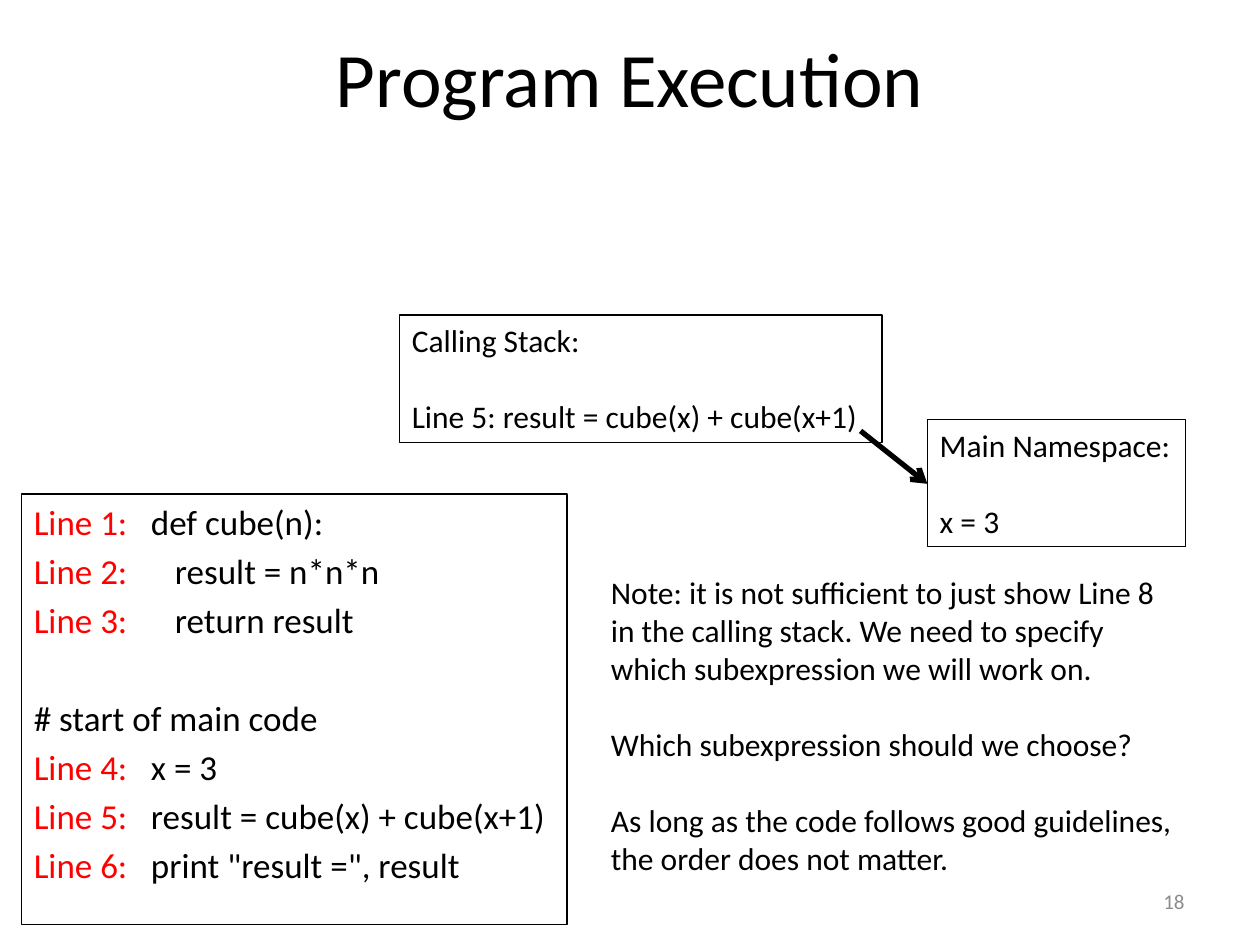
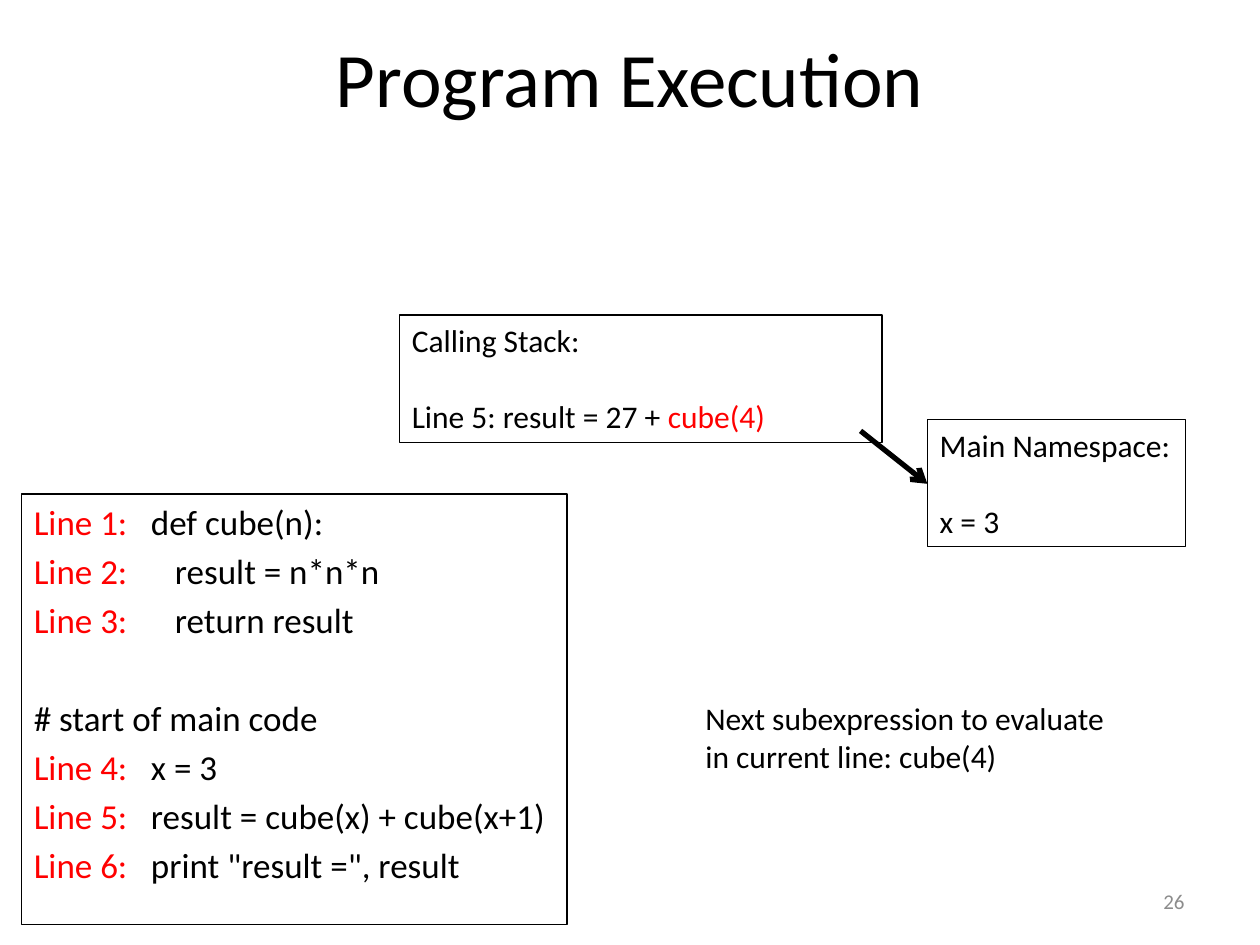
from dataclasses import dataclass

from lxml import etree
from pptx import Presentation
from pptx.dml.color import RGBColor
from pptx.enum.shapes import MSO_CONNECTOR
from pptx.enum.text import MSO_ANCHOR, MSO_AUTO_SIZE, PP_ALIGN
from pptx.oxml.ns import qn
from pptx.slide import Slide
from pptx.text.text import TextFrame, _Paragraph
from pptx.util import Inches, Pt

STRAIGHT = MSO_CONNECTOR.STRAIGHT
TOP, MIDDLE = MSO_ANCHOR.TOP, MSO_ANCHOR.MIDDLE
LEFT, CENTER, RIGHT = PP_ALIGN.LEFT, PP_ALIGN.CENTER, PP_ALIGN.RIGHT
FIT_TEXT = MSO_AUTO_SIZE.SHAPE_TO_FIT_TEXT

BLACK = RGBColor(0x00, 0x00, 0x00)
RED = RGBColor(0xFF, 0x00, 0x00)
GRAY = RGBColor(0x8C, 0x8C, 0x8C)

FONT = "Calibri"
TITLE_SIZE, CODE_SIZE, BODY_SIZE, NUMBER_SIZE = Pt(44), Pt(20), Pt(18), Pt(12)
BODY_GAP = Pt(22)          # one line of body text
CODE_SPACING = Pt(4)
CODE_SECTION_GAP = Pt(32)
CODE_TAB, CODE_INDENT = Inches(0.93), Inches(0.19)


@dataclass(frozen=True)
class Area:
    left: float
    top: float
    width: float
    height: float


@dataclass(frozen=True)
class CodeLine:
    label: str
    statement: str
    level: int = 0


@dataclass(frozen=True)
class Step:
    number: int
    stack_line: str
    pending_call: str
    note: tuple[str, ...]
    note_area: Area


TITLE_AREA = Area(0.5, 0.17, 9, 0.88)
CODE_AREA = Area(0.17, 3.92, 4.33, 3.42)
NUMBER_AREA = Area(7.17, 6.95, 2.33, 0.4)
NAMESPACE_AREA = Area(7.36, 3.33, 2.05, 1.01)
STACK_AREA = Area(3.17, 2.5, 3.83, 1.01)

FUNCTION_CODE = (
    CodeLine("Line 1:", "def cube(n):"),
    CodeLine("Line 2:", "result = n*n*n", 1),
    CodeLine("Line 3:", "return result", 1),
)
MAIN_COMMENT = CodeLine("", "# start of main code")
MAIN_CODE = (
    CodeLine("Line 4:", "x = 3"),
    CodeLine("Line 5:", "result = cube(x) + cube(x+1)"),
    CodeLine("Line 6:", 'print "result =", result'),
)

STEPS = (
    Step(
        18, "Line 5: result = cube(x) + cube(x+1)", "",
        (
            "Note: it is not sufficient to just show Line 8\n"
            "in the calling stack. We need to specify\n"
            "which subexpression we will work on.",
            "Which subexpression should we choose?",
            "As long as the code follows good guidelines,\n"
            "the order does not matter.",
        ),
        Area(4.75, 4.5, 4.71, 2.52),
    ),
    Step(
        26, "Line 5: result = 27 + ", "cube(4)",
        ("Next subexpression to evaluate\nin current line: cube(4)",),
        Area(5.5, 5.5, 3.4, 0.71),
    ),
)


def add_frame(slide: Slide, area: Area, outlined: bool = False,
              anchor: MSO_ANCHOR = TOP) -> TextFrame:
    box = slide.shapes.add_textbox(Inches(area.left), Inches(area.top),
                                   Inches(area.width), Inches(area.height))
    if outlined:
        box.line.color.rgb = BLACK
        box.line.width = Pt(0.75)
    frame = box.text_frame
    frame.word_wrap = True
    frame.vertical_anchor = anchor
    return frame


def add_span(paragraph: _Paragraph, text: str, size: Pt, color: RGBColor = BLACK) -> None:
    run = paragraph.add_run()
    run.text = text
    run.font.name = FONT
    run.font.size = size
    run.font.color.rgb = color


def add_label(slide: Slide, area: Area, text: str, size: Pt, color: RGBColor,
              alignment: PP_ALIGN) -> None:
    paragraph = add_frame(slide, area, anchor=MIDDLE).paragraphs[0]
    paragraph.alignment = alignment
    add_span(paragraph, text, size, color)


def fill_body(frame: TextFrame, blocks: tuple[str, ...]) -> None:
    """Write one paragraph per block, a blank line apart; newlines are line breaks."""
    frame.auto_size = FIT_TEXT
    for index, block in enumerate(blocks):
        paragraph = frame.add_paragraph() if index else frame.paragraphs[0]
        paragraph.text = block
        paragraph.alignment = LEFT
        if index:
            paragraph.space_before = BODY_GAP
        for run in paragraph.runs:
            run.font.name = FONT
            run.font.size = BODY_SIZE
            run.font.color.rgb = BLACK


def set_tab(paragraph: _Paragraph, position: int) -> None:
    properties = paragraph._p.get_or_add_pPr()
    tabs = etree.SubElement(properties, qn("a:tabLst"))
    etree.SubElement(tabs, qn("a:tab"), pos=str(position), algn="l")


def add_code(slide: Slide) -> None:
    frame = add_frame(slide, CODE_AREA, outlined=True)
    for index, line in enumerate((*FUNCTION_CODE, MAIN_COMMENT, *MAIN_CODE)):
        paragraph = frame.add_paragraph() if index else frame.paragraphs[0]
        paragraph.space_before = CODE_SECTION_GAP if line is MAIN_COMMENT else CODE_SPACING
        if line.label:
            set_tab(paragraph, CODE_TAB + line.level * CODE_INDENT)
            add_span(paragraph, line.label + "\t", CODE_SIZE, RED)
        add_span(paragraph, line.statement, CODE_SIZE)


def add_namespace_arrow(slide: Slide) -> None:
    arrow = slide.shapes.add_connector(STRAIGHT, Inches(6.83), Inches(3.42),
                                       Inches(7.36), Inches(3.84))
    arrow.line.color.rgb = BLACK
    arrow.line.width = Pt(3)
    etree.SubElement(arrow.line._get_or_add_ln(), qn("a:tailEnd"), type="arrow")
    etree.SubElement(arrow._element.spPr, qn("a:effectLst"))


def add_step(slide: Slide, step: Step) -> None:
    add_label(slide, TITLE_AREA, "Program Execution", TITLE_SIZE, BLACK, CENTER)
    add_code(slide)
    add_label(slide, NUMBER_AREA, str(step.number), NUMBER_SIZE, GRAY, RIGHT)

    note = add_frame(slide, step.note_area)
    fill_body(note, step.note)
    note.word_wrap = False

    fill_body(add_frame(slide, NAMESPACE_AREA, outlined=True),
              ("Main Namespace:", "x = 3"))
    stack = add_frame(slide, STACK_AREA, outlined=True)
    fill_body(stack, ("Calling Stack:", step.stack_line))
    if step.pending_call:
        add_span(stack.paragraphs[-1], step.pending_call, BODY_SIZE, RED)
    add_namespace_arrow(slide)


def main() -> None:
    deck = Presentation()
    deck.slide_width, deck.slide_height = Inches(10), Inches(7.5)
    blank = deck.slide_layouts[6]
    for step in STEPS:
        add_step(deck.slides.add_slide(blank), step)
    deck.save("out.pptx")


if __name__ == "__main__":
    main()
